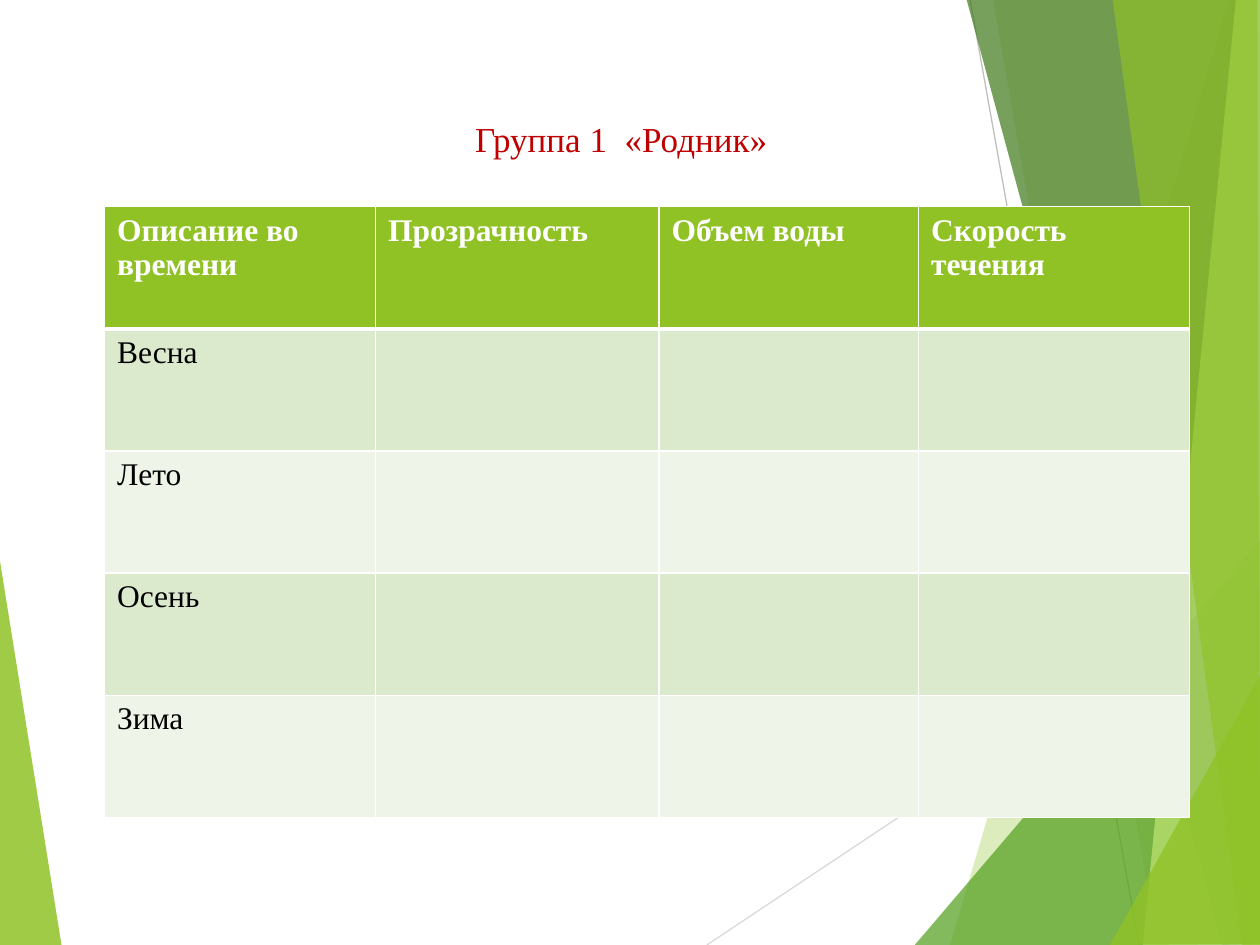
from dataclasses import dataclass

import pptx
import pptx.dml.color
import pptx.enum.shapes
import pptx.enum.text
import pptx.oxml
import pptx.oxml.ns
import pptx.util
from pptx.dml.color import RGBColor
from pptx.util import Inches

FONT = "Times New Roman"
WHITE = RGBColor(0xFF, 0xFF, 0xFF)
BLACK = RGBColor(0x00, 0x00, 0x00)
RED = RGBColor(0xC0, 0x00, 0x00)
LIME = RGBColor(0x90, 0xC2, 0x26)
GREEN = RGBColor(0x54, 0xA0, 0x21)
DARK_GREEN = RGBColor(0x3F, 0x78, 0x19)
PALE_LIME = RGBColor(0xC0, 0xE4, 0x74)
LIGHT_GRAY = RGBColor(0xD9, 0xD9, 0xD9)
GRAY = RGBColor(0xBF, 0xBF, 0xBF)
BAND_DARK = RGBColor(0xDB, 0xE9, 0xCD)
BAND_LIGHT = RGBColor(0xEE, 0xF4, 0xE8)

Point = tuple[float, float]


@dataclass
class Facet:
    color: RGBColor
    opacity: int
    points: list[Point]


@dataclass
class Ray:
    color: RGBColor
    start: Point
    end: Point


DECOR = [
    Facet(LIME, 85, [(-0.01, 4.39), (0.49, 7.51), (-0.01, 7.5)]),
    Ray(LIGHT_GRAY, (5.61, 7.5), (10.01, 4.57)),
    Ray(GRAY, (7.7, 0), (9.04, 7.5)),
    Facet(LIME, 30, [(9.75, 0), (7.54, 7.5), (10.02, 7.51), (10.01, 0.01)]),
    Facet(LIME, 20, [(7.88, -0.01), (9.19, 7.5), (10.01, 7.5), (10.01, -0.01)]),
    Facet(GREEN, 72, [(7.26, 7.5), (10, 4.29), (10.01, 7.5)]),
    Facet(DARK_GREEN, 70, [(7.67, -0.01), (9.7, 7.5), (10.01, 7.49), (10.01, -0.01)]),
    Facet(PALE_LIME, 70, [(9.81, -0.01), (9.07, 7.5), (10.01, 7.5), (10, -0.01)]),
    Facet(LIME, 65, [(8.83, -0.01), (9.86, 7.5), (10, 7.5), (9.98, -0.01)]),
    Facet(LIME, 80, [(8.81, 7.5), (10.01, 5.35), (10.01, 7.49)]),
]

HEADERS = ["Описание во времени", "Прозрачность", "Объем воды", "Скорость течения"]
SEASONS = ["Весна", "Лето", "Осень", "Зима"]
COL_WIDTHS = [2.15, 2.25, 2.06, 2.15]
ROW_HEIGHT = 0.97


def sub(parent, tag: str, **attrs: str):
    el = pptx.oxml.parse_xml(f"<{tag} {pptx.oxml.ns.nsdecls('a')}/>")
    for name, value in attrs.items():
        el.set(name, value)
    parent.append(el)
    return el


def add_facet(s, facet: Facet) -> None:
    first, *rest = [(Inches(x), Inches(y)) for x, y in facet.points]
    fb = s.shapes.build_freeform(*first)
    fb.add_line_segments(rest, close=True)
    sp = fb.convert_to_shape()
    sp.shadow.inherit = False
    sp.line.fill.background()
    sp.fill.solid()
    sp.fill.fore_color.rgb = facet.color
    clr = sp._element.spPr.find(".//" + pptx.oxml.ns.qn("a:srgbClr"))
    sub(clr, "a:alpha", val=str(facet.opacity * 1000))


def add_ray(s, ray: Ray) -> None:
    ends = [Inches(v) for v in ray.start + ray.end]
    cx = s.shapes.add_connector(pptx.enum.shapes.MSO_CONNECTOR.STRAIGHT, *ends)
    cx.line.color.rgb = ray.color
    cx.line.width = pptx.util.Pt(0.75)
    sub(cx._element.spPr, "a:effectLst")


def add_run(p, text: str, size: int, color: RGBColor, bold: bool = False) -> None:
    r = p.add_run()
    r.text = text
    r.font.name = FONT
    r.font.size = pptx.util.Pt(size)
    r.font.bold = bold
    r.font.color.rgb = color


def style_cell(cell, fill: RGBColor, top: int, bottom: int) -> None:
    tc_pr = cell._tc.get_or_add_tcPr()
    for side, width in {"L": 1, "R": 1, "T": top, "B": bottom}.items():
        ln = sub(tc_pr, f"a:ln{side}", w=str(pptx.util.Pt(width)))
        sub(sub(ln, "a:solidFill"), "a:srgbClr", val=str(WHITE))
    cell.fill.solid()
    cell.fill.fore_color.rgb = fill


def add_season_table(s) -> None:
    rows = [HEADERS] + [[season, "", "", ""] for season in SEASONS]
    frame = s.shapes.add_table(
        len(rows), len(HEADERS), Inches(0.83), Inches(1.64),
        Inches(sum(COL_WIDTHS)), Inches(ROW_HEIGHT * len(rows)))
    table = frame.table
    for col, width in zip(table.columns, COL_WIDTHS):
        col.width = Inches(width)
    for i, texts in enumerate(rows):
        table.rows[i].height = Inches(ROW_HEIGHT)
        header = i == 0
        fill = LIME if header else (BAND_DARK if i % 2 else BAND_LIGHT)
        for j, text in enumerate(texts):
            cell = table.cell(i, j)
            style_cell(cell, fill, 3 if i == 1 else 1, 3 if header else 1)
            if text:
                p = cell.text_frame.paragraphs[0]
                add_run(p, text, 18, WHITE if header else BLACK, header)


def add_title(s) -> None:
    sp = s.shapes.title
    sp.left, sp.top, sp.width, sp.height = map(Inches, (0.55, 0.58, 8.76, 0.74))
    tf = sp.text_frame
    tf.word_wrap = True
    tf.vertical_anchor = pptx.enum.text.MSO_ANCHOR.BOTTOM
    p = tf.paragraphs[0]
    p.alignment = pptx.enum.text.PP_ALIGN.CENTER
    add_run(p, "Группа 1  «Родник»", 20, RED)
    s.shapes._spTree.append(sp._element)


def main() -> None:
    prs = pptx.Presentation()
    prs.slide_width, prs.slide_height = Inches(10), Inches(7.5)
    s = prs.slides.add_slide(prs.slide_layouts[5])
    for item in DECOR:
        if isinstance(item, Facet):
            add_facet(s, item)
        else:
            add_ray(s, item)
    add_title(s)
    add_season_table(s)
    prs.save("out.pptx")


if __name__ == "__main__":
    main()
